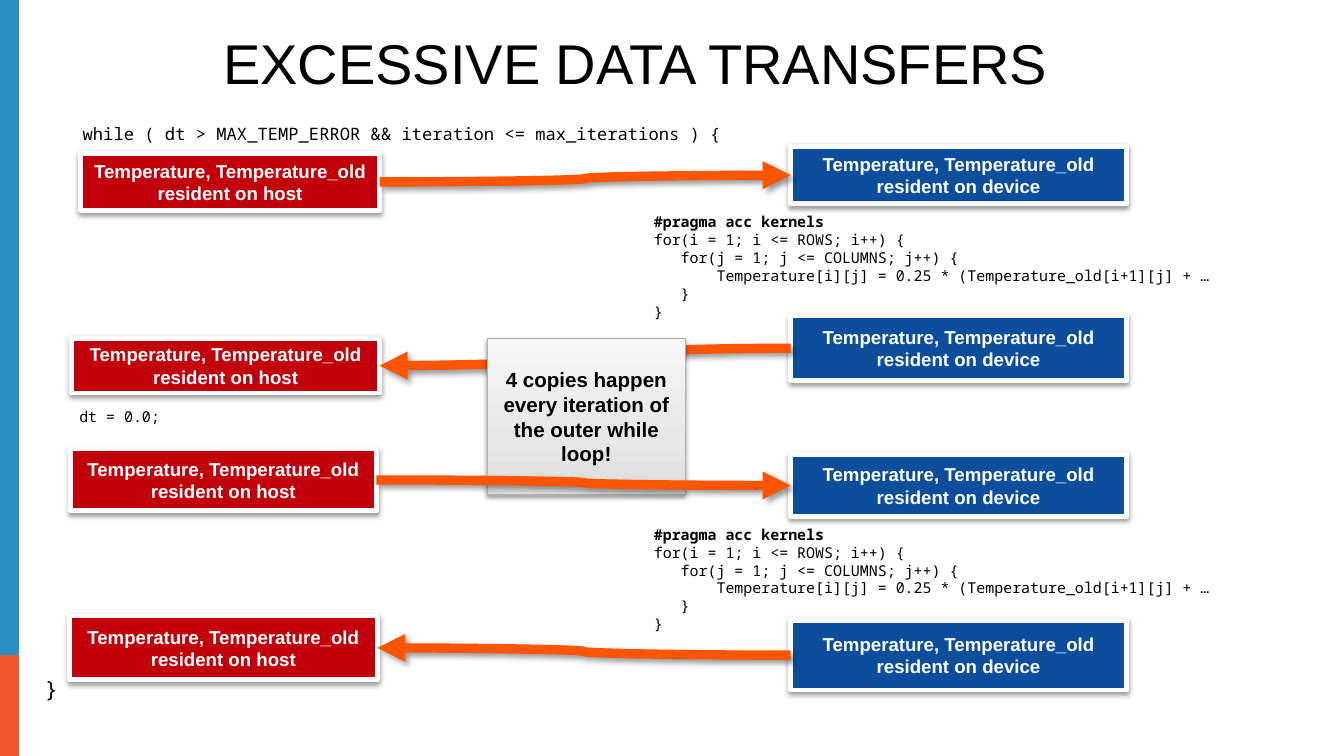
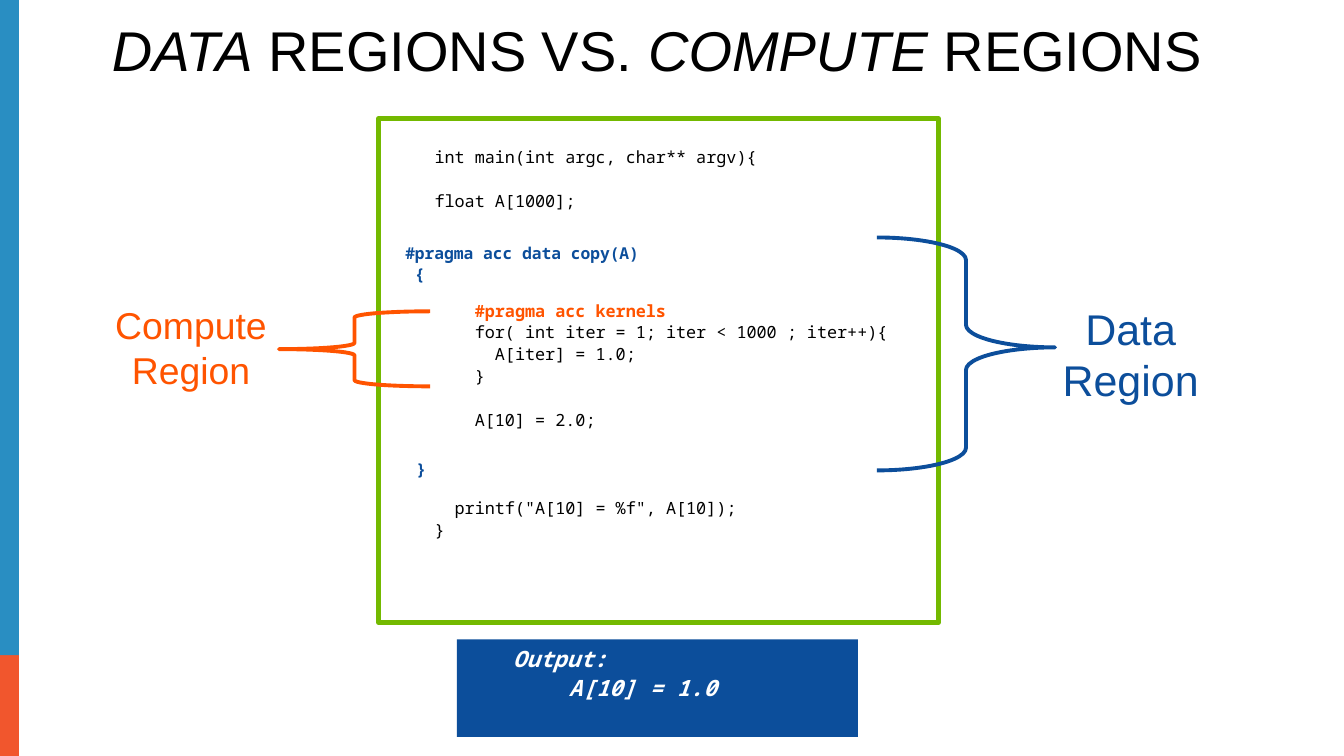
"""Build two slides on data transfers and data regions in accelerator code."""
from dataclasses import dataclass, replace
from typing import NamedTuple

from lxml import etree
from pptx import Presentation
from pptx.dml.color import RGBColor
from pptx.enum.shapes import MSO_CONNECTOR, MSO_SHAPE
from pptx.enum.text import MSO_ANCHOR, MSO_AUTO_SIZE, PP_ALIGN
from pptx.oxml.ns import qn
from pptx.util import Inches, Pt

RECTANGLE, ROUNDED = MSO_SHAPE.RECTANGLE, MSO_SHAPE.ROUNDED_RECTANGLE
LEFT_BRACE, RIGHT_BRACE = MSO_SHAPE.LEFT_BRACE, MSO_SHAPE.RIGHT_BRACE
CURVE = MSO_CONNECTOR.CURVE
TOP, MIDDLE, BOTTOM = MSO_ANCHOR.TOP, MSO_ANCHOR.MIDDLE, MSO_ANCHOR.BOTTOM
LEFT, CENTER = PP_ALIGN.LEFT, PP_ALIGN.CENTER
LEFT_SITE, RIGHT_SITE = 1, 3
TITLE_ONLY = 5

COLORS = {
    "black": "000000",
    "white": "FFFFFF",
    "band_blue": "298EC2",
    "band_orange": "F1562D",
    "host": "C2000B",
    "device": "0C4E9B",
    "accent": "FF5400",
    "frame": "73B900",
    "callout_line": "AFAFAF",
}
CALLOUT_STOPS = ((0, "DDDDDD"), (35, "E7E7E7"), (100, "F6F6F6"))


class Area(NamedTuple):
    """Left, top, width and height in inches."""
    left: float
    top: float
    width: float
    height: float

    def lengths(self) -> list:
        """Return the four measures as lengths."""
        return [Inches(value) for value in self]


class Shadow(NamedTuple):
    """Opacity in percent, blur and distance in points, angle in degrees."""
    opacity: int
    blur: float
    distance: float
    angle: int


class Transfer(NamedTuple):
    """One copy between a host box and a device box."""
    host: Area
    device: Area
    to_device: bool


@dataclass(frozen=True)
class Style:
    """Look of a paragraph."""
    size: float
    color: str = "black"
    font: str = "Noto Sans Mono"
    bold: bool = False
    italic: bool = False
    align: int = LEFT


@dataclass(frozen=True)
class Line:
    """One paragraph with its style, space before and left indent."""
    text: str
    style: Style
    before: float = 0
    indent: float = 0


BOX_SHADOW = Shadow(38, 3.1, 1.6, 90)
ARROW_SHADOW = Shadow(40, 4, 3, 45)
TITLE = Style(36, font="Arial", align=CENTER)
BOX_LABEL = Style(12, "white", "Arial", bold=True, align=CENTER)
CALLOUT = Style(13.2, font="Arial", bold=True, align=CENTER)
SMALL_CODE = Style(9.6)
CODE = Style(10.8)
DATA_CODE = Style(10.5, "device", bold=True)
OUTPUT = Style(14.4, "white", bold=True, italic=True)

BANDS = ((Area(-0.03, 5.07, 0.2, 1.68), "band_orange"),
         (Area(-0.03, 0, 0.2, 5.85), "band_blue"))
TRANSFERS = (
    Transfer(Area(0.72, 1.37, 2.67, 0.51), Area(7.06, 1.31, 3, 0.51), True),
    Transfer(Area(0.64, 3.02, 2.75, 0.49), Area(7.06, 2.82, 3, 0.58), False),
    Transfer(Area(0.63, 4.01, 2.73, 0.55), Area(7.06, 4.06, 3, 0.55), True),
    Transfer(Area(0.62, 5.5, 2.75, 0.57), Area(7.06, 5.54, 3, 0.62), False),
)
KERNEL = (
    "#pragma acc kernels",
    "for(i = 1; i <= ROWS; i++) {",
    "   for(j = 1; j <= COLUMNS; j++) {",
    "       Temperature[i][j] = 0.25 * (Temperature_old[i+1][j] + …",
    "   }",
    "}",
)
LINE_PITCH, LINE_GAP = 14.15, 1.08
PROGRAM = (
    (0, "int main(int argc, char** argv){"),
    (1, "float A[1000];"),
    (4, "    #pragma acc kernels"),
    (0, "    for( int iter = 1; iter < 1000 ; iter++){"),
    (0, "      A[iter] = 1.0;"),
    (0, "    }"),
    (1, "    A[10] = 2.0;"),
    (3, '  printf("A[10] = %f", A[10]);'),
    (0, "}"),
)


def rgb(name: str) -> RGBColor:
    """Look up a named colour."""
    return RGBColor.from_string(COLORS[name])


def apply_style(paragraph, style: Style) -> None:
    """Format a paragraph."""
    paragraph.alignment = style.align
    font = paragraph.font
    font.name, font.size = style.font, Pt(style.size)
    font.bold, font.italic = style.bold, style.italic
    font.color.rgb = rgb(style.color)


def write_lines(frame, lines: list[Line]) -> None:
    """Fill a text frame with one paragraph for each line."""
    for number, line in enumerate(lines):
        paragraph = frame.add_paragraph() if number else frame.paragraphs[0]
        paragraph.text = line.text
        if line.indent:
            properties = paragraph._p.get_or_add_pPr()
            properties.set("marL", str(Inches(line.indent)))
            properties.set("indent", "0")
        paragraph.space_before = Pt(line.before)
        apply_style(paragraph, line.style)


def set_shadow(shape, shadow: Shadow | None) -> None:
    """Give a shape or connector the stated shadow, or none."""
    effects = etree.SubElement(shape.element.spPr, qn("a:effectLst"))
    if shadow:
        outer = etree.SubElement(
            effects, qn("a:outerShdw"), blurRad=str(Pt(shadow.blur)),
            dist=str(Pt(shadow.distance)), dir=str(shadow.angle * 60000),
            rotWithShape="0")
        color = etree.SubElement(outer, qn("a:srgbClr"), val=COLORS["black"])
        etree.SubElement(color, qn("a:alpha"), val=str(shadow.opacity * 1000))


def add_box(slide, area: Area, kind: int = RECTANGLE, fill: str | None = None,
            line: str | None = None, width: float = 3,
            shadow: Shadow | None = None, adjustments: tuple = ()):
    """Draw a preset shape."""
    box = slide.shapes.add_shape(kind, *area.lengths())
    for number, value in enumerate(adjustments):
        box.adjustments[number] = value
    if fill:
        box.fill.solid()
        box.fill.fore_color.rgb = rgb(fill)
    else:
        box.fill.background()
    if line:
        box.line.color.rgb = rgb(line)
        box.line.width = Pt(width)
    else:
        box.line.fill.background()
    set_shadow(box, shadow)
    return box


def add_text(slide, area: Area, lines: list[Line], wrap: bool = True) -> None:
    """Add a text box."""
    frame = slide.shapes.add_textbox(*area.lengths()).text_frame
    frame.word_wrap = wrap
    frame.auto_size = MSO_AUTO_SIZE.SHAPE_TO_FIT_TEXT
    write_lines(frame, lines)


def add_titled_slide(deck, area: Area, spans: list[tuple[str, bool]]):
    """Add a slide whose title is made of plain and italic spans."""
    slide = deck.slides.add_slide(deck.slide_layouts[TITLE_ONLY])
    title = slide.shapes.title
    title.left, title.top, title.width, title.height = area.lengths()
    frame = title.text_frame
    frame.vertical_anchor = BOTTOM
    frame.auto_size = MSO_AUTO_SIZE.NONE
    paragraph = frame.paragraphs[0]
    paragraph.line_spacing = 0.9
    apply_style(paragraph, TITLE)
    for text, italic in spans:
        span = paragraph.add_run()
        span.text = text
        span.font.italic = italic
    return slide


def add_bands(deck, slide) -> None:
    """Draw the side bands and move them to the shared layout."""
    for area, color in BANDS:
        band = add_box(slide, area, fill=color)
        deck.slide_layouts[TITLE_ONLY].shapes.element.append(band.element)


def add_resident_box(slide, area: Area, place: str):
    """Draw a box that tells where the arrays reside."""
    box = add_box(slide, area, fill=place, line="white", shadow=BOX_SHADOW)
    box.text_frame.word_wrap = True
    box.text_frame.vertical_anchor = MIDDLE
    label = f"Temperature, Temperature_old resident on {place}"
    write_lines(box.text_frame, [Line(label, BOX_LABEL)])
    return box


def add_transfer(slide, transfer: Transfer) -> None:
    """Draw a host box, a device box and the arrow between them."""
    ends = [(add_resident_box(slide, transfer.host, "host"), RIGHT_SITE),
            (add_resident_box(slide, transfer.device, "device"), LEFT_SITE)]
    start, end = ends if transfer.to_device else reversed(ends)
    arrow = slide.shapes.add_connector(CURVE, 0, 0, 0, 0)
    arrow.begin_connect(*start)
    arrow.end_connect(*end)
    arrow.line.color.rgb = rgb("accent")
    arrow.line.width = Pt(6)
    etree.SubElement(arrow.line._get_or_add_ln(), qn("a:tailEnd"), type="triangle")
    set_shadow(arrow, ARROW_SHADOW)


def add_callout(slide) -> None:
    """Draw the grey gradient note."""
    note = add_box(slide, Area(4.35, 3.02, 1.77, 1.4), line="callout_line",
                   width=0.75, shadow=BOX_SHADOW)
    gradient = etree.Element(qn("a:gradFill"), rotWithShape="1")
    stops = etree.SubElement(gradient, qn("a:gsLst"))
    for position, color in CALLOUT_STOPS:
        stop = etree.SubElement(stops, qn("a:gs"), pos=str(position * 1000))
        etree.SubElement(stop, qn("a:srgbClr"), val=color)
    etree.SubElement(gradient, qn("a:lin"), ang=str(270 * 60000), scaled="0")
    properties = note.element.spPr
    properties.replace(properties.find(qn("a:noFill")), gradient)
    note.text_frame.word_wrap = True
    note.text_frame.vertical_anchor = MIDDLE
    write_lines(note.text_frame, [Line(
        "4 copies happen every iteration of the outer while loop!", CALLOUT)])


def add_panel(slide, area: Area, lines: list[Line], top_inset: float, **look) -> None:
    """Draw a square-cornered panel with text from its top."""
    panel = add_box(slide, area, ROUNDED, adjustments=(0,), **look)
    frame = panel.text_frame
    frame.word_wrap = True
    frame.vertical_anchor = TOP
    frame.margin_left = frame.margin_right = 0
    frame.margin_top = Inches(top_inset)
    write_lines(frame, lines)


def build_transfers(deck) -> None:
    """Build the slide on excessive transfers."""
    slide = add_titled_slide(deck, Area(0.64, 0.2, 10.07, 0.71),
                             [("EXCESSIVE DATA TRANSFERS", False)])
    add_bands(deck, slide)
    add_text(slide, Area(0.64, 1.05, 11.7, 0.29), [Line(
        "while ( dt > MAX_TEMP_ERROR && iteration <= max_iterations ) {", Style(11))])
    kernel = [Line(text, replace(SMALL_CODE, bold=text.startswith("#")))
              for text in KERNEL]
    for top in (1.85, 4.64):
        add_text(slide, Area(5.74, top, 5.97, 1.07), kernel)
    for transfer in TRANSFERS[:2]:
        add_transfer(slide, transfer)
    add_callout(slide)
    for transfer in TRANSFERS[2:]:
        add_transfer(slide, transfer)
    add_text(slide, Area(0.3, 5.98, 11.7, 0.34), [Line("}", Style(14.4))])
    add_text(slide, Area(0.61, 3.59, 1.1, 0.26), [Line("dt = 0.0;", SMALL_CODE)])


def build_regions(deck) -> None:
    """Build the slide that compares data and compute regions."""
    slide = add_titled_slide(deck, Area(-0.05, 0.23, 11.83, 0.57), [
        ("DATA", True), (" REGIONS VS. ", False),
        ("COMPUTE", True), (" REGIONS", False)])
    pragma = replace(CODE, color="accent", bold=True)
    program = [Line(text, pragma if "#" in text else CODE,
                    skipped * LINE_PITCH + LINE_GAP if number else 0, 0.5)
               for number, (skipped, text) in enumerate(PROGRAM)]
    add_panel(slide, Area(3.38, 1.06, 5, 4.5), program, 0.25, line="frame")
    add_panel(slide, Area(4.08, 5.71, 3.58, 0.87), [
        Line("Output:", OUTPUT, indent=0.5),
        Line("A[10] = 1.0", OUTPUT, 1.44, 1)], 0.05, fill="device")
    add_text(slide, Area(3.52, 2.12, 2.35, 0.47), [
        Line("#pragma acc data copy(A)", DATA_CODE),
        Line(" {", DATA_CODE, 1.05)], wrap=False)
    add_text(slide, Area(3.62, 4.05, 0.29, 0.28), [Line("}", DATA_CODE)], wrap=False)
    for name, color, size, label, kind, brace, shape in (
            ("Compute", "accent", 24, Area(0.92, 2.65, 1.57, 0.91),
             LEFT_BRACE, Area(2.49, 2.78, 1.35, 0.67), (0.083, 0.504)),
            ("Data", "device", 27.6, Area(9.38, 2.65, 1.43, 1.03),
             RIGHT_BRACE, Area(7.83, 2.12, 1.59, 2.08), (0.127, 0.472))):
        add_box(slide, brace, kind, line=color, width=2.5, adjustments=shape)
        style = Style(size, color, "Arial", align=CENTER)
        add_text(slide, label, [Line(name, style), Line("Region", style)], wrap=False)


def main() -> None:
    """Build and save the deck."""
    deck = Presentation()
    deck.slide_width, deck.slide_height = Inches(12), Inches(6.75)
    build_transfers(deck)
    build_regions(deck)
    deck.save("out.pptx")


if __name__ == "__main__":
    main()
